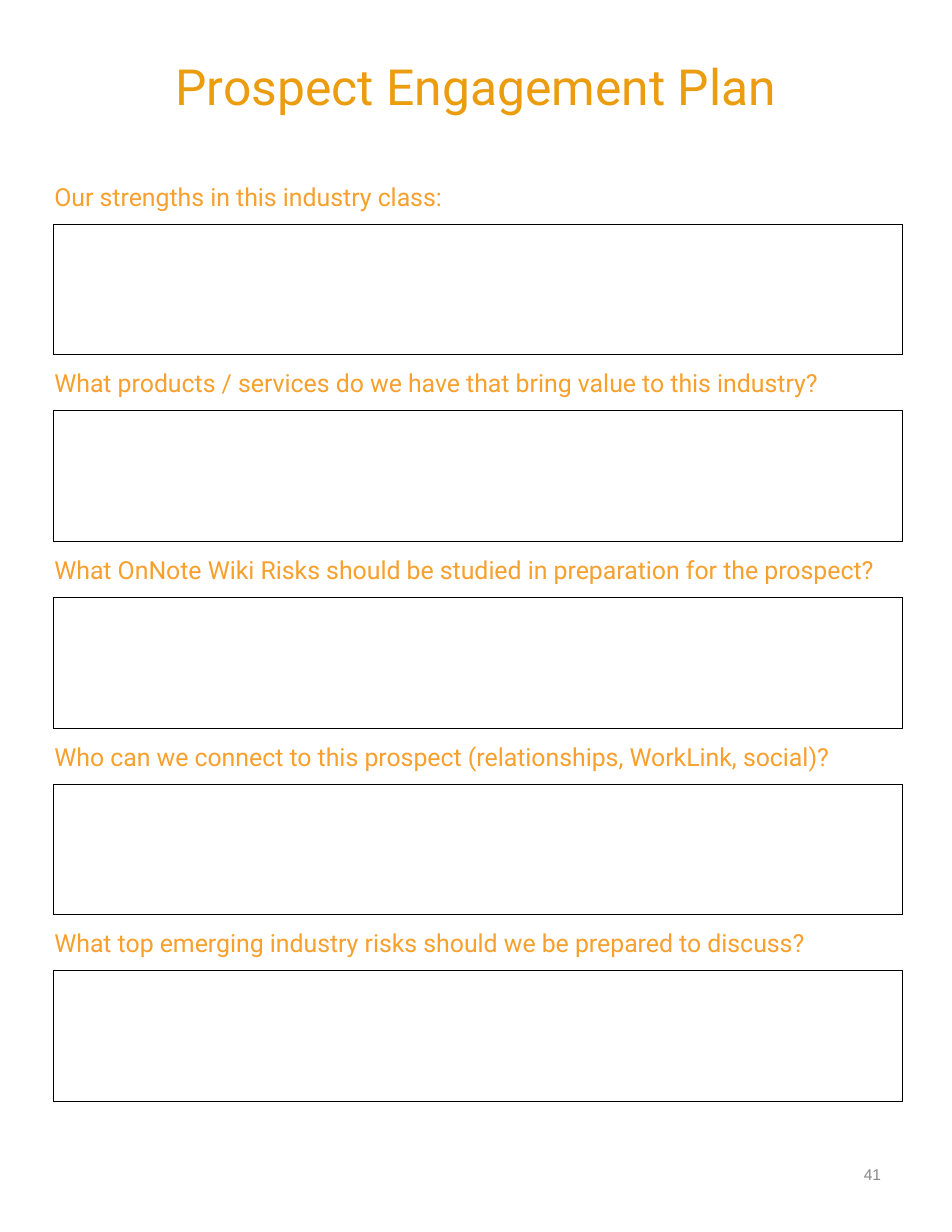
from pptx import Presentation
from pptx.dml.color import RGBColor
from pptx.enum.dml import MSO_LINE
from pptx.enum.shapes import MSO_SHAPE
from pptx.enum.text import MSO_ANCHOR, PP_ALIGN
from pptx.util import Pt

RECT = MSO_SHAPE.RECTANGLE
DOTTED = MSO_LINE.ROUND_DOT  # sysDot
TOP, MIDDLE = MSO_ANCHOR.TOP, MSO_ANCHOR.MIDDLE
LEFT, CENTER, RIGHT = PP_ALIGN.LEFT, PP_ALIGN.CENTER, PP_ALIGN.RIGHT

TITLE_ONLY = 5
FIRST_LABEL_TOP = 114
PITCH = 120
QUESTIONS = [
    "Our strengths in this industry class:",
    "What products / services do we have that bring value to this industry?",
    "What OnNote Wiki Risks should be studied in preparation for the prospect?",
    "Who can we connect to this prospect (relationships, WorkLink, social)?",
    "What top emerging industry risks should we be prepared to discuss?",
]


def rgb(value):
    return RGBColor.from_string(value)


def write(shape, text, font, size, color, align=LEFT, anchor=TOP,
          inset=(3.6, 3.6), wrap=True):
    """Fill a shape with one paragraph; inset is (horizontal, vertical)."""
    tf = shape.text_frame
    tf.word_wrap = wrap
    tf.vertical_anchor = anchor
    tf.margin_left = tf.margin_right = Pt(inset[0])
    tf.margin_top = tf.margin_bottom = Pt(inset[1])
    p = tf.paragraphs[0]
    p.text = text
    p.alignment = align
    p.font.name = font
    p.font.size = Pt(size)
    p.font.color.rgb = rgb(color)
    return p


def add_title(s, text):
    title = s.shapes.title
    title.left, title.top, title.width, title.height = (
        Pt(31.5), Pt(34.5), Pt(549), Pt(45.5))
    p = write(title, text, "Roboto", 32, "EB9C0F", CENTER, MIDDLE)
    p.line_spacing = 0.9


def add_question(s, text, top):
    """Add a question with its empty answer box below."""
    label = s.shapes.add_textbox(Pt(30), Pt(top), Pt(570), Pt(24.5))
    write(label, text, "Roboto", 16, "F7A02D", inset=(5, 2.5))
    box = s.shapes.add_shape(RECT, Pt(34), Pt(top + 30), Pt(546), Pt(84))
    box.shadow.inherit = False
    box.fill.background()
    box.line.color.rgb = rgb("000000")
    box.line.width = Pt(0.25)
    box.line.dash_style = DOTTED


def add_page_number(s, number):
    sp = s.shapes.add_textbox(Pt(551), Pt(746), Pt(19), Pt(18))
    write(sp, number, "Arial", 10, "888888", RIGHT, MIDDLE, wrap=False)


def main():
    prs = Presentation()
    prs.slide_width, prs.slide_height = Pt(612), Pt(792)
    s = prs.slides.add_slide(prs.slide_layouts[TITLE_ONLY])
    add_title(s, "Prospect Engagement Plan")
    for i, question in enumerate(QUESTIONS):
        add_question(s, question, FIRST_LABEL_TOP + i * PITCH)
    add_page_number(s, "41")
    prs.save("out.pptx")


if __name__ == "__main__":
    main()
